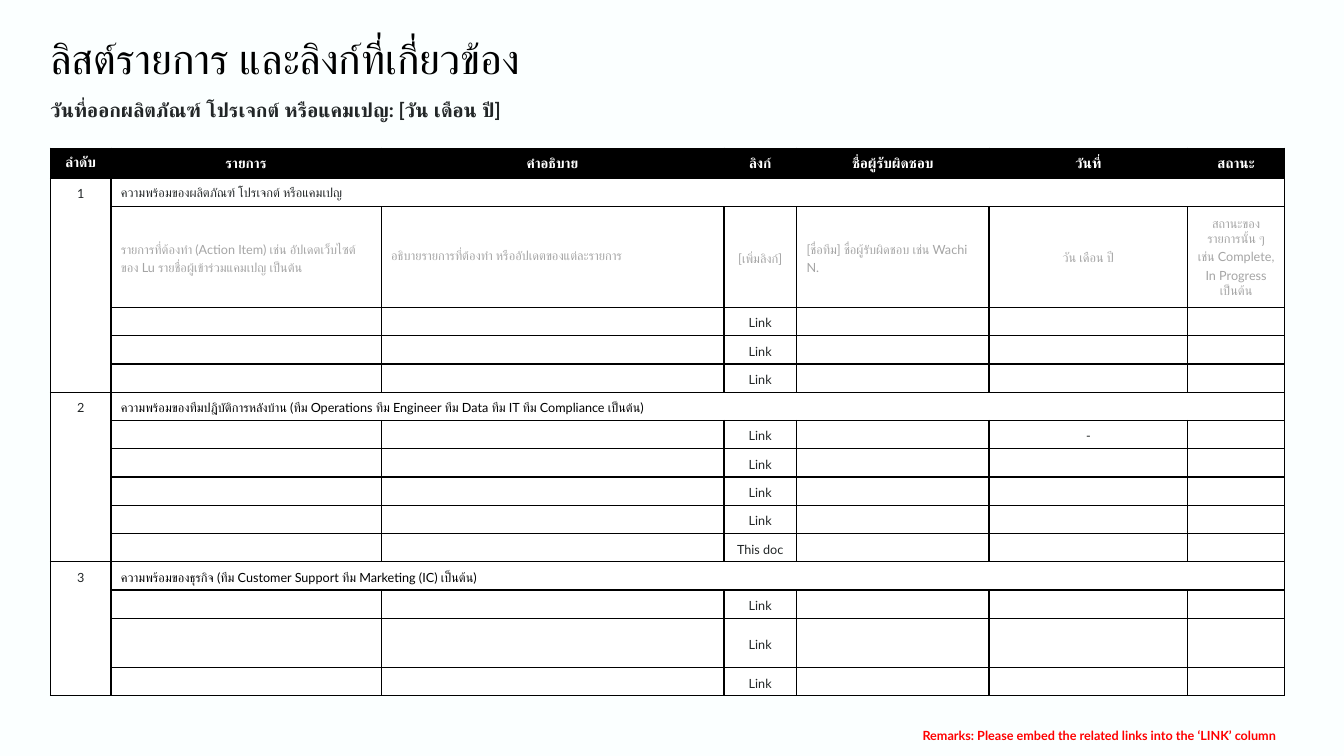
from pptx import Presentation
from pptx.util import Inches, Pt
from pptx.dml.color import RGBColor as RGB
from pptx.enum.text import PP_ALIGN as AL, MSO_ANCHOR as ANC, MSO_AUTO_SIZE as AUTO
from pptx.oxml import parse_xml
from pptx.oxml.ns import nsdecls

HUES = {"page": "FBFFFF", "white": "FFFFFF", "black": "000000",
        "ink": "222627", "hint": "A5A5A5", "red": "FF0000"}
COLS = [0.6, 2.68, 3.4, 0.72, 1.91, 1.97, 0.96]
ROW, HEAD, HINT, TALL = 0.28, 0.3, 1, 0.49
HEADS = ["ลำดับ", "รายการ", "คำอธิบาย", "ลิงก์", "ชื่อผู้รับผิดชอบ", "วันที่", "สถานะ"]
HINTS = ["รายการที่ต้องทำ (Action Item) เช่น อัปเดตเว็บไซต์ของ Lu รายชื่อผู้เข้าร่วมแคมเปญ เป็นต้น",
         "อธิบายรายการที่ต้องทำ หรืออัปเดตของแต่ละรายการ", "[เพิ่มลิงก์]",
         "[ชื่อทีม] ชื่อผู้รับผิดชอบ เช่น Wachi N.", "วัน เดือน ปี",
         "สถานะของรายการนั้น ๆ เช่น Complete, In Progress เป็นต้น"]


def line(link="Link", date="", high=ROW):
    return ["", "", link, "", date, ""], high, "ink"


PARTS = [
    ("ความพร้อมของผลิตภัณฑ์ โปรเจกต์ หรือแคมเปญ", "ink",
     [(HINTS, HINT, "hint"), line(), line(), line()]),
    ("ความพร้อมของทีมปฎิบัติการหลังบ้าน (ทีม Operations ทีม Engineer ทีม Data ทีม IT ทีม Compliance เป็นต้น)",
     "black", [line(date="-"), line(), line(), line(), line("This doc")]),
    ("ความพร้อมของธุรกิจ (ทีม Customer Support ทีม Marketing (IC) เป็นต้น)", "black",
     [line(), line(high=TALL), line()]),
]


class Sheet:
    face = "Lato"

    def __init__(self, deck):
        self.slide = deck.slides.add_slide(deck.slide_layouts[6])
        fill = self.slide.background.fill
        fill.solid()
        fill.fore_color.rgb = RGB.from_string(HUES["page"])

    def words(self, frame, text, size, hue, bold=False, align=AL.LEFT, gap=1.2):
        para = frame.paragraphs[0]
        if text:
            para.add_run().text = text
        para.alignment = align
        para.line_spacing = gap
        font = para.font
        font.name, font.size, font.bold = self.face, Pt(size), bold
        font.color.rgb = RGB.from_string(HUES[hue])

    def text(self, box, pads, text, size, hue, grow=False, **look):
        frame = self.slide.shapes.add_textbox(*map(Inches, box)).text_frame
        frame.word_wrap = True
        frame.auto_size = AUTO.SHAPE_TO_FIT_TEXT if grow else AUTO.NONE
        (frame.margin_left, frame.margin_top,
         frame.margin_right, frame.margin_bottom) = map(Inches, pads)
        self.words(frame, text, size, hue, **look)

    def grid(self, left, top, cols, rows):
        shape = self.slide.shapes.add_table(
            len(rows), len(cols), *map(Inches, (left, top, sum(cols), sum(rows))))
        grid = shape.table
        grid.first_row = grid.horz_banding = False
        for col, wide in zip(grid.columns, cols):
            col.width = Inches(wide)
        for row, high in zip(grid.rows, rows):
            row.height = Inches(high)
        return grid

    def cell(self, cell, text, hue="ink", fill="white", size=9, anchor=ANC.MIDDLE, **look):
        props = cell._tc.get_or_add_tcPr()
        for side in ("lnL", "lnR", "lnT", "lnB"):
            props.append(parse_xml(
                f'<a:{side} {nsdecls("a")} w="12700"><a:solidFill>'
                f'<a:srgbClr val="{HUES["black"]}"/></a:solidFill></a:{side}>'))
        cell.fill.solid()
        cell.fill.fore_color.rgb = RGB.from_string(HUES[fill])
        cell.vertical_anchor = anchor
        self.words(cell.text_frame, text, size, hue, **look)
        if not text:
            cell._tc.txBody.p_lst[0].append(parse_xml(
                f'<a:endParaRPr {nsdecls("a")} sz="{size * 100}"/>'))


def main():
    deck = Presentation()
    deck.slide_width, deck.slide_height = Inches(13.33), Inches(7.5)
    sheet = Sheet(deck)

    highs = [HEAD]
    for _, _, lines in PARTS:
        highs += [ROW] + [high for _, high, _ in lines]
    grid = sheet.grid(0.5, 1.47, COLS, highs)
    for col, head in enumerate(HEADS):
        sheet.cell(grid.cell(0, col), head, "white", "black", 10, bold=True,
                   align=AL.CENTER, gap=1.2 if col else 1)

    row = 1
    for num, (title, hue, lines) in enumerate(PARTS, 1):
        last = row + len(lines)
        for at in range(row, last + 1):
            sheet.cell(grid.cell(at, 0), str(num) if at == row else "",
                       anchor=ANC.TOP, align=AL.CENTER)
        for col in range(1, len(COLS)):
            sheet.cell(grid.cell(row, col), title if col == 1 else "", hue)
        grid.cell(row, 0).merge(grid.cell(last, 0))
        grid.cell(row, 1).merge(grid.cell(row, len(COLS) - 1))
        for at, (texts, _, tint) in enumerate(lines, row + 1):
            for col, text in enumerate(texts, 1):
                sheet.cell(grid.cell(at, col), text, tint, gap=1 if col == 2 else 1.2,
                           align=AL.LEFT if col in (1, 2, 4) else AL.CENTER)
        row = last + 1

    sheet.text((0.5, 0.42, 12.44, 0.45), (0, 0, 0, 0),
               "ลิสต์รายการ และลิงก์ที่เกี่ยวข้อง", 30, "black", gap=0.8)
    sheet.text((8.46, 7.15, 4.29, 0.35), (0.1, 0.1, 0.1, 0.1),
               "Remarks: Please embed the related links into the ‘LINK’ column",
               9, "red", grow=True, bold=True, align=AL.RIGHT, gap=1)
    sheet.text((0.5, 0.88, 12.58, 0.37), (0, 0.05, 0.1, 0.05),
               "วันที่ออกผลิตภัณฑ์ โปรเจกต์ หรือแคมเปญ: [วัน เดือน ปี]",
               14, "ink", grow=True, bold=True)
    deck.save("out.pptx")


if __name__ == "__main__":
    main()
